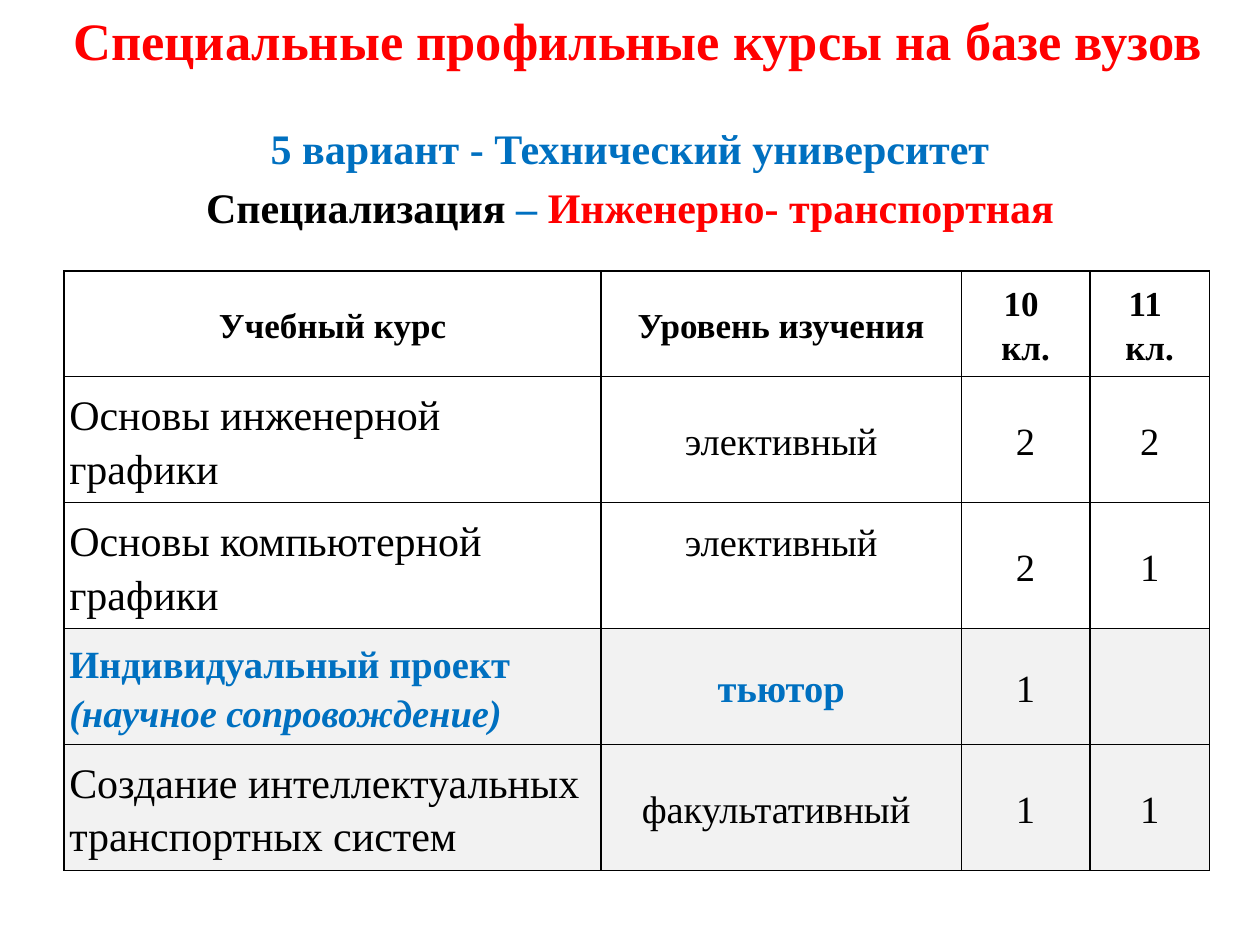
from lxml import etree
from pptx import Presentation
from pptx.dml.color import RGBColor
from pptx.enum.text import MSO_ANCHOR, MSO_AUTO_SIZE, PP_ALIGN
from pptx.oxml.ns import qn
from pptx.util import Inches, Pt

CENTER, LEFT = PP_ALIGN.CENTER, PP_ALIGN.LEFT
MIDDLE, TOP = MSO_ANCHOR.MIDDLE, MSO_ANCHOR.TOP
NO_AUTOFIT = MSO_AUTO_SIZE.NONE
FONT = "Times New Roman"
BLACK, RED, BLUE = "000000", "FF0000", "0070C0"
WHITE, GRAY = "FFFFFF", "F2F2F2"
CELL_INSET = 0.04
COLUMN_WIDTHS = (4.26, 2.86, 1.02, 0.95)
ROW_HEIGHTS = (0.84, 1, 1, 0.92, 1)
HEADER_ROW, PROJECT_ROW = 0, 3
COURSES = (
    ("Учебный курс", "Уровень изучения", "10 \nкл.", "11 \nкл."),
    ("Основы инженерной графики", "элективный", "2", "2"),
    ("Основы компьютерной графики", "элективный", "2", "1"),
    ("Индивидуальный проект\n(научное сопровождение)", "тьютор", "1", ""),
    ("Создание интеллектуальных транспортных систем", "факультативный", "1", "1"),
)


def rgb(value):
    return RGBColor.from_string(value)


def format_run(run, size, color, bold=False, italic=False):
    font = run.font
    font.name = FONT
    font.size = Pt(size)
    font.color.rgb = rgb(color)
    font.bold = bold
    font.italic = italic


def place(placeholder, left, top, width, height, anchor):
    placeholder.left, placeholder.top = Inches(left), Inches(top)
    placeholder.width, placeholder.height = Inches(width), Inches(height)
    frame = placeholder.text_frame
    frame.word_wrap = True
    frame.auto_size = NO_AUTOFIT
    frame.vertical_anchor = anchor
    return frame


def add_title(slide, wording):
    heading = place(slide.shapes.title, 0.27, 0.01, 9.59, 0.61, MIDDLE)
    heading.text = wording
    heading.paragraphs[0].alignment = CENTER
    format_run(heading.paragraphs[0].runs[0], 30, RED, bold=True)


def add_variant(slide, lines):
    variant = place(slide.placeholders[1], 0.75, 0.92, 8.5, 0.94, TOP)
    for index, parts in enumerate(lines):
        line = variant.paragraphs[0] if index == 0 else variant.add_paragraph()
        line.alignment = CENTER
        properties = line._p.get_or_add_pPr()
        properties.set("marL", "0")
        properties.set("indent", "0")
        etree.SubElement(properties, qn("a:buNone"))
        for wording, color in parts:
            run = line.add_run()
            run.text = wording
            format_run(run, 24, color, bold=True)


def outline_cell(cell):
    properties = cell._tc.get_or_add_tcPr()
    for side in ("a:lnL", "a:lnR", "a:lnT", "a:lnB"):
        border = etree.SubElement(properties, qn(side), w=str(Pt(1)))
        fill = etree.SubElement(border, qn("a:solidFill"))
        etree.SubElement(fill, qn("a:srgbClr"), val=BLACK)


def fill_cell(cell, wording, row, column):
    outline_cell(cell)
    cell.fill.solid()
    cell.fill.fore_color.rgb = rgb(GRAY if row >= PROJECT_ROW else WHITE)
    cell.vertical_anchor = MIDDLE
    cell.margin_left = cell.margin_right = Inches(CELL_INSET)
    cell.margin_top = cell.margin_bottom = Inches(CELL_INSET)
    cell.text_frame.text = wording

    is_header = row == HEADER_ROW
    is_project = row == PROJECT_ROW and column < 2
    is_course = column == 0 and not is_header
    size = 20 if is_header else 24 if is_course and not is_project else 22
    for index, paragraph in enumerate(cell.text_frame.paragraphs):
        paragraph.alignment = LEFT if is_course else CENTER
        paragraph.line_spacing = 1.15
        for run in paragraph.runs:
            format_run(run, size, BLUE if is_project else BLACK,
                       bold=is_header or is_project,
                       italic=is_project and index == 1)


def add_courses(slide):
    table = slide.shapes.add_table(
        len(COURSES), len(COLUMN_WIDTHS), Inches(0.51), Inches(2.15),
        Inches(sum(COLUMN_WIDTHS)), Inches(sum(ROW_HEIGHTS))).table
    table.first_row = table.horz_banding = False
    for column, width in zip(table.columns, COLUMN_WIDTHS):
        column.width = Inches(width)
    for row, height in zip(table.rows, ROW_HEIGHTS):
        row.height = Inches(height)
    for row, course in enumerate(COURSES):
        for column, wording in enumerate(course):
            fill_cell(table.cell(row, column), wording, row, column)
    table.cell(2, 1).margin_bottom = Inches(0.44)
    table.cell(4, 1).margin_right = Inches(0.12)


def main():
    presentation = Presentation()
    presentation.slide_width = Inches(10)
    presentation.slide_height = Inches(7.5)
    slide = presentation.slides.add_slide(presentation.slide_layouts[1])
    add_title(slide, "Специальные профильные курсы на базе вузов")
    add_courses(slide)
    add_variant(slide, (
        (("5 вариант - Технический университет", BLUE),),
        (("Специализация", BLACK), (" – ", BLUE), ("Инженерно- транспортная", RED)),
    ))
    presentation.save("out.pptx")


if __name__ == "__main__":
    main()
